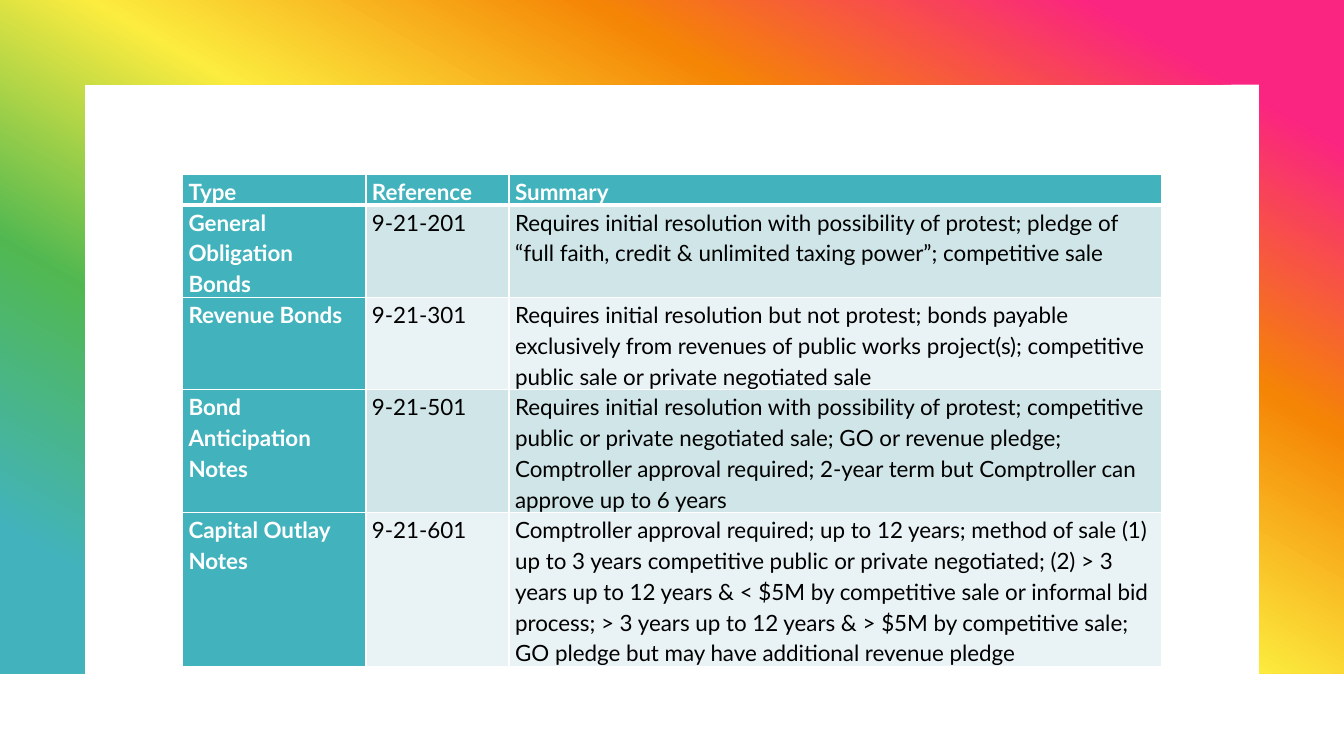
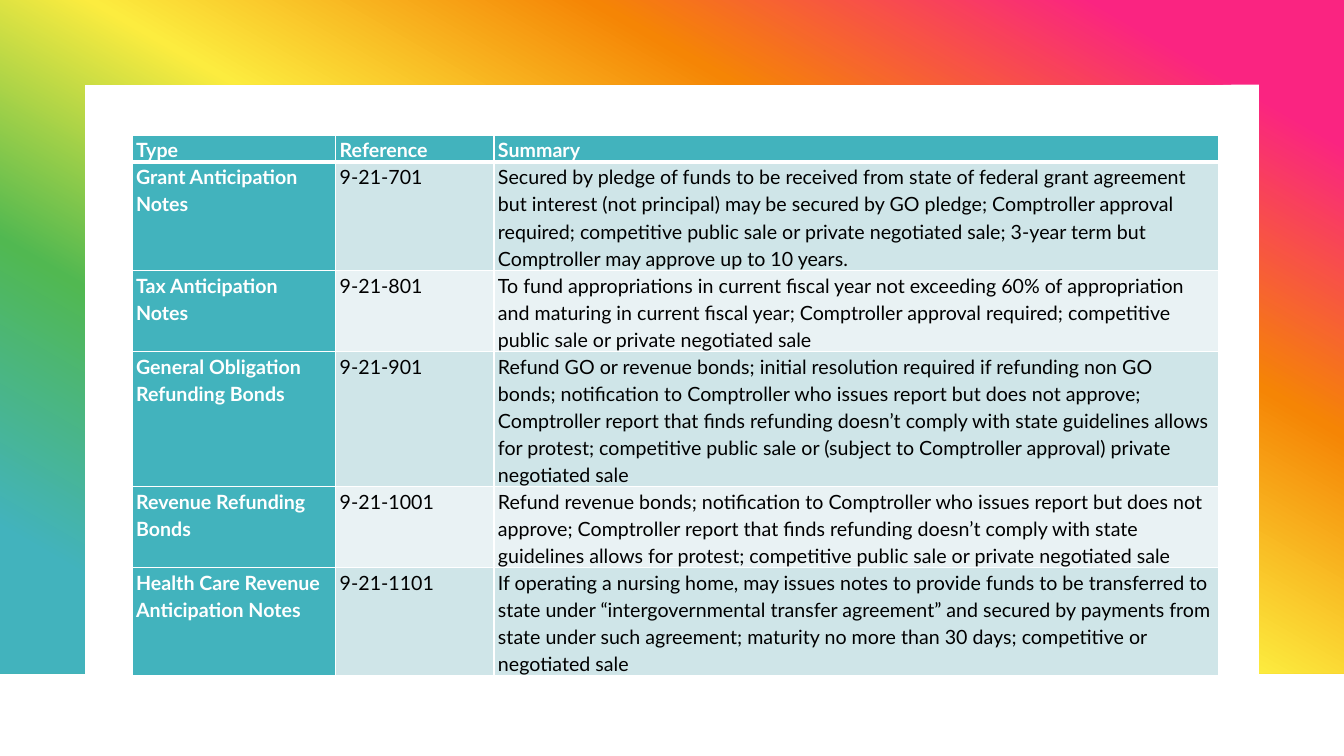
from lxml import etree
from pptx import Presentation
from pptx.dml.color import RGBColor
from pptx.oxml.ns import qn
from pptx.util import Inches, Pt

TEAL = RGBColor(0x42, 0xB3, 0xBD)
PALE = RGBColor(0xCF, 0xE5, 0xE8)
PALER = RGBColor(0xE9, 0xF2, 0xF4)
WHITE = RGBColor(0xFF, 0xFF, 0xFF)
BLACK = RGBColor(0x00, 0x00, 0x00)
RAINBOW = [
    (10, RGBColor(0xFA, 0x24, 0x81)),
    (30, RGBColor(0xF5, 0x85, 0x05)),
    (50, RGBColor(0xFC, 0xEC, 0x3F)),
    (70, RGBColor(0x51, 0xB8, 0x51)),
    (90, TEAL),
]
FONT = "Lato"
SLIDE_W, SLIDE_H = 13.33, 7.5
FRAME_H, FRAME_BAND = 6.68, 0.84
HEADINGS = ("Type", "Reference", "Summary")

BONDS = [
    ("General Obligation Bonds", "9-21-201",
     "Requires initial resolution with possibility of protest; pledge of “full faith, credit & "
     "unlimited taxing power”; competitive sale"),
    ("Revenue Bonds", "9-21-301",
     "Requires initial resolution but not protest; bonds payable exclusively from revenues of "
     "public works project(s); competitive public sale or private negotiated sale"),
    ("Bond Anticipation Notes", "9-21-501",
     "Requires initial resolution with possibility of protest; competitive public or private "
     "negotiated sale; GO or revenue pledge; Comptroller approval required; 2-year term but "
     "Comptroller can approve up to 6 years"),
    ("Capital Outlay Notes", "9-21-601",
     "Comptroller approval required; up to 12 years; method of sale (1) up to 3 years competitive "
     "public or private negotiated; (2) > 3 years up to 12 years & < $5M by competitive sale or "
     "informal bid process; > 3 years up to 12 years & > $5M by competitive sale; GO pledge but "
     "may have additional revenue pledge"),
]
NOTES = [
    ("Grant Anticipation Notes", "9-21-701",
     "Secured by pledge of funds to be received from state of federal grant agreement but interest "
     "(not principal) may be secured by GO pledge; Comptroller approval required; competitive "
     "public sale or private negotiated sale; 3-year term but Comptroller may approve up to 10 "
     "years."),
    ("Tax Anticipation Notes", "9-21-801",
     "To fund appropriations in current fiscal year not exceeding 60% of appropriation and "
     "maturing in current fiscal year; Comptroller approval required; competitive public sale or "
     "private negotiated sale"),
    ("General Obligation Refunding Bonds", "9-21-901",
     "Refund GO or revenue bonds; initial resolution required if refunding non GO bonds; "
     "notification to Comptroller who issues report but does not approve; Comptroller report that "
     "finds refunding doesn’t comply with state guidelines allows for protest; competitive public "
     "sale or (subject to Comptroller approval) private negotiated sale"),
    ("Revenue Refunding Bonds", "9-21-1001",
     "Refund revenue bonds; notification to Comptroller who issues report but does not approve; "
     "Comptroller report that finds refunding doesn’t comply with state guidelines allows for "
     "protest; competitive public sale or private negotiated sale"),
    ("Health Care Revenue Anticipation Notes", "9-21-1101",
     "If operating a nursing home, may issues notes to provide funds to be transferred to state "
     "under “intergovernmental transfer agreement” and secured by payments from state under such "
     "agreement; maturity no more than 30 days; competitive or negotiated sale"),
]


def add_color(parent, color):
    """Append an RGB colour element to parent."""
    etree.SubElement(parent, qn("a:srgbClr"), val=str(color))


def add_frame(slide, left, top, width, height, band):
    """Draw the rainbow frame, open at the bottom, in the given box."""
    right, bottom = left + width, top + height
    corners = [
        (right, top), (right, bottom), (right - band, bottom), (right - band, top + band),
        (left + band, top + band), (left + band, bottom), (left, bottom),
    ]
    builder = slide.shapes.build_freeform(Inches(left), Inches(top))
    builder.add_line_segments([(Inches(x), Inches(y)) for x, y in corners])
    frame = builder.convert_to_shape()
    frame.shadow.inherit = False
    frame.line.fill.background()
    frame.fill.gradient()
    frame.fill.gradient_angle = 240
    stops = frame._element.spPr.find(qn("a:gradFill")).find(qn("a:gsLst"))
    for stop in list(stops):
        stops.remove(stop)
    for percent, color in RAINBOW:
        add_color(etree.SubElement(stops, qn("a:gs"), pos=str(percent * 1000)), color)


def set_borders(cell, top, bottom):
    """Give a cell white borders, with top and bottom widths in points."""
    properties = cell._tc.get_or_add_tcPr()
    widths = {"a:lnL": 1, "a:lnR": 1, "a:lnT": top, "a:lnB": bottom}
    for index, (tag, width) in enumerate(widths.items()):
        border = etree.Element(qn(tag), w=str(Pt(width)))
        add_color(etree.SubElement(border, qn("a:solidFill")), WHITE)
        properties.insert(index, border)


def fill_cell(cell, text, size, inset, fill, strong, space_after):
    """Write one styled cell."""
    cell.margin_left = cell.margin_right = Inches(inset)
    cell.margin_top = cell.margin_bottom = 0
    cell.fill.solid()
    cell.fill.fore_color.rgb = fill
    paragraph = cell.text_frame.paragraphs[0]
    paragraph.line_spacing = 1.15
    paragraph.space_after = Pt(space_after)
    run = paragraph.add_run()
    run.text = text
    run.font.name = FONT
    run.font.size = Pt(size)
    run.font.bold = strong
    run.font.color.rgb = WHITE if strong else BLACK


def add_debt_table(slide, left, top, widths, entries, line_counts, line_height, size, inset):
    """Place a table of debt types, with row heights that follow their line counts."""
    rows = [HEADINGS, *entries]
    table = slide.shapes.add_table(
        len(rows), len(HEADINGS), Inches(left), Inches(top),
        Inches(sum(widths)), Inches(sum(line_counts) * line_height),
    ).table
    table.first_row = table.horz_banding = False
    for column, width in zip(table.columns, widths):
        column.width = Inches(width)
    for r, texts in enumerate(rows):
        table.rows[r].height = Inches(line_counts[r] * line_height)
        for c, text in enumerate(texts):
            strong = r == 0 or c == 0
            fill = TEAL if strong else (PALE if r % 2 else PALER)
            cell = table.cell(r, c)
            fill_cell(cell, text, size, inset, fill, strong, 8 if c == 2 else 0)
            set_borders(cell, 3 if r == 1 else 1, 3 if r == 0 else 1)


def add_debt_slide(presentation, **table):
    """Add a framed slide holding one debt table."""
    slide = presentation.slides.add_slide(presentation.slide_layouts[6])
    add_frame(slide, 0, 0, SLIDE_W, FRAME_H, FRAME_BAND)
    add_debt_table(slide, **table)


def main():
    """Build and save the presentation."""
    presentation = Presentation()
    presentation.slide_width = Inches(SLIDE_W)
    presentation.slide_height = Inches(SLIDE_H)
    add_debt_slide(
        presentation, left=1.81, top=1.73, widths=(1.82, 1.42, 6.47), entries=BONDS,
        line_counts=(1, 3, 3, 4, 5), line_height=0.3, size=16, inset=0.06,
    )
    add_debt_slide(
        presentation, left=1.31, top=1.34, widths=(2.02, 1.57, 7.19), entries=NOTES,
        line_counts=(1, 4, 3, 5, 3, 4), line_height=0.26, size=14, inset=0.04,
    )
    presentation.save("out.pptx")


if __name__ == "__main__":
    main()
